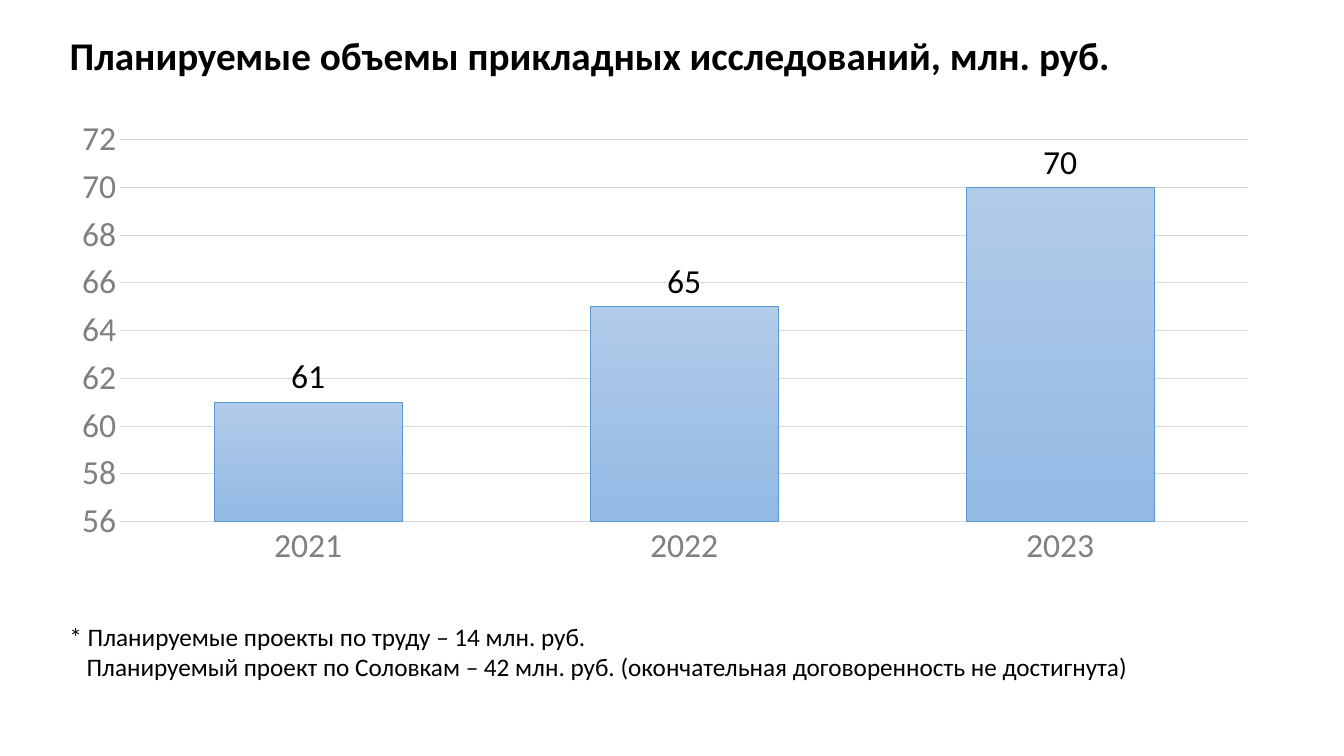
from lxml import etree
from pptx import Presentation
from pptx.chart.data import CategoryChartData
from pptx.dml.color import RGBColor
from pptx.enum.chart import XL_CHART_TYPE, XL_LABEL_POSITION, XL_TICK_MARK
from pptx.enum.text import MSO_ANCHOR, MSO_AUTO_SIZE, PP_ALIGN
from pptx.oxml import parse_xml
from pptx.oxml.ns import nsdecls
from pptx.util import Inches, Pt

COLUMNS = XL_CHART_TYPE.COLUMN_CLUSTERED
OUTSIDE_END = XL_LABEL_POSITION.OUTSIDE_END
NO_TICK = XL_TICK_MARK.NONE
MIDDLE, TOP = MSO_ANCHOR.MIDDLE, MSO_ANCHOR.TOP
NO_AUTOFIT = MSO_AUTO_SIZE.NONE
LEFT = PP_ALIGN.LEFT

COLORS = {
    "text": "000000",
    "axis": "808080",
    "grid": "D9D9D9",
    "bar_top": "B1CBE9",
    "bar_bottom": "93B9E4",
    "bar_edge": "5998D0",
}
LEFT_EDGE, CONTENT_WIDTH = 0.59, 12.03


class SlideBuilder:
    """Holds the style and the current slide."""

    font_name = "Calibri"

    def __init__(self, slide):
        self.slide = slide

    def color(self, key):
        return RGBColor.from_string(COLORS[key])

    def style_font(self, font, size, color="text", bold=False):
        font.name = self.font_name
        font.size = Pt(size)
        font.bold = bold
        font.color.rgb = self.color(color)

    def style_line(self, line, color):
        line.color.rgb = self.color(color)
        line.width = Pt(0.75)

    def style_frame(self, frame, anchor):
        frame.word_wrap = True
        frame.auto_size = NO_AUTOFIT
        frame.vertical_anchor = anchor

    def title(self, text, left, top, width, height):
        title = self.slide.shapes.title
        title.left, title.top = Inches(left), Inches(top)
        title.width, title.height = Inches(width), Inches(height)
        title.text_frame.text = text
        self.style_frame(title.text_frame, MIDDLE)
        heading = title.text_frame.paragraphs[0]
        heading.alignment = LEFT
        self.style_font(heading.font, 28, bold=True)

    def footnote(self, lines, left, top, width, height):
        note = self.slide.shapes.add_textbox(
            Inches(left), Inches(top), Inches(width), Inches(height))
        frame = note.text_frame
        self.style_frame(frame, TOP)
        frame.text = "\n".join(lines)
        for paragraph in frame.paragraphs:
            self.style_font(paragraph.font, 18)
        # Later lines align with the words after the asterisk
        for paragraph in frame.paragraphs[1:]:
            paragraph._p.get_or_add_pPr().set("marL", str(Inches(0.17)))

    def column_chart(self, volumes, left, top, width, height):
        data = CategoryChartData(number_format="0")
        data.categories = list(volumes)
        data.add_series("Series 1", list(volumes.values()))
        chart = self.slide.shapes.add_chart(
            COLUMNS, Inches(left), Inches(top), Inches(width), Inches(height), data).chart
        chart.has_title = False
        chart.has_legend = False
        self.style_font(chart.font, 24)
        self.style_columns(chart.plots[0])
        self.style_axes(chart)
        self.place_plot(chart, x=0.05, y=0.06, w=0.93, h=0.82)

    def style_columns(self, plot):
        plot.gap_width = 100
        plot.overlap = -24
        plot.vary_by_categories = False
        plot.has_data_labels = True
        labels = plot.data_labels
        labels.show_value = True
        labels.position = OUTSIDE_END
        self.style_font(labels.font, 24)

        bars = plot.series[0].format
        bars.fill.gradient()
        bars.fill.gradient_angle = 270
        for stop, key in zip(bars.fill.gradient_stops, ("bar_top", "bar_bottom")):
            stop.color.rgb = self.color(key)
        self.style_line(bars.line, "bar_edge")

    def style_axes(self, chart):
        years, amounts = chart.category_axis, chart.value_axis
        for axis in (years, amounts):
            axis.major_tick_mark = axis.minor_tick_mark = NO_TICK
            self.style_font(axis.tick_labels.font, 24, "axis")
        years.has_major_gridlines = False
        self.style_line(years.format.line, "grid")
        amounts.minimum_scale, amounts.maximum_scale = 56, 72
        amounts.major_unit = 2
        amounts.format.line.fill.background()
        self.style_line(amounts.major_gridlines.format.line, "grid")

    def place_plot(self, chart, **fractions):
        plot_area = chart._chartSpace.chart.plotArea
        for old in plot_area.findall("{*}layout"):
            plot_area.remove(old)
        layout = parse_xml(f"<c:layout {nsdecls('c')}><c:manualLayout/></c:layout>")
        namespace = layout.nsmap["c"]
        settings = {"layoutTarget": "inner", "xMode": "edge", "yMode": "edge", **fractions}
        for tag, value in settings.items():
            etree.SubElement(layout[0], f"{{{namespace}}}{tag}", val=str(value))
        plot_area.insert(0, layout)


def main():
    presentation = Presentation()
    presentation.slide_width, presentation.slide_height = Inches(13.33), Inches(7.5)
    title_only = presentation.slide_layouts[5]
    builder = SlideBuilder(presentation.slides.add_slide(title_only))

    # Heading
    builder.title("Планируемые объемы прикладных исследований, млн. руб.",
                  LEFT_EDGE, 0.26, 11.39, 0.57)

    # Planned volumes by year
    planned_volumes = {"2021": 61, "2022": 65, "2023": 70}
    builder.column_chart(planned_volumes, LEFT_EDGE, 1.11, CONTENT_WIDTH, 4.62)

    # Footnote
    builder.footnote(
        ["* Планируемые проекты по труду – 14 млн. руб.",
         "Планируемый проект по Соловкам – 42 млн. руб. "
         "(окончательная договоренность не достигнута)"],
        LEFT_EDGE, 6.11, CONTENT_WIDTH, 0.71)

    presentation.save("out.pptx")


if __name__ == "__main__":
    main()
